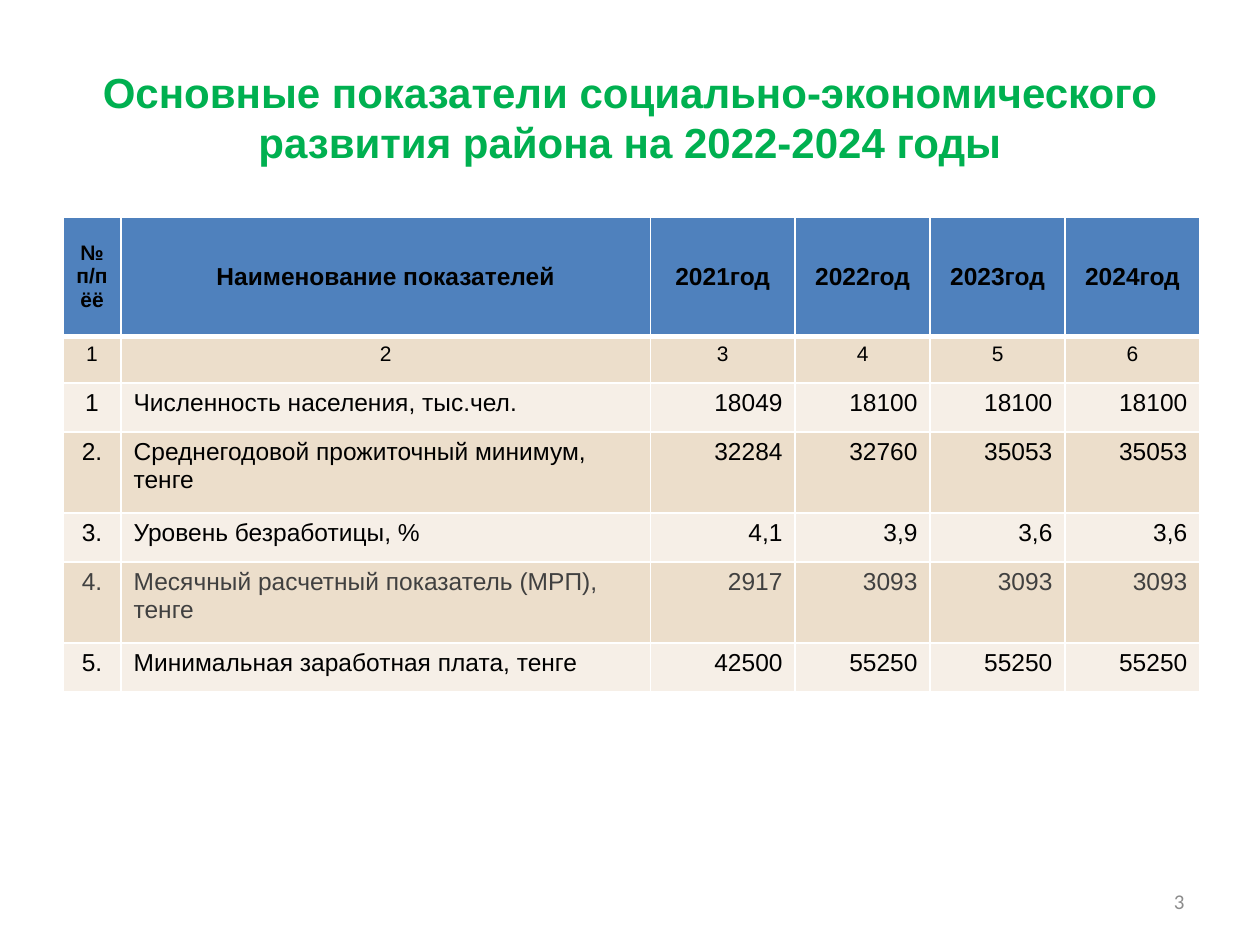
from dataclasses import dataclass

from lxml.etree import SubElement
from pptx import Presentation
from pptx.dml.color import RGBColor
from pptx.enum.text import MSO_ANCHOR as Anchor, PP_ALIGN as Align
from pptx.oxml.ns import qn
from pptx.util import Cm, Pt


@dataclass(frozen=True)
class Theme:
    font: str = "Arial"
    number_font: str = "Calibri"
    title: str = "00B050"
    ink: str = "000000"
    soft_ink: str = "404040"
    muted: str = "8C8C8C"
    header: str = "4F81BD"
    bands: tuple = ("ECDECB", "F6EFE7")
    border: str = "FFFFFF"
    title_size: int = 24
    body_size: int = 14
    small_size: int = 12
    thin: int = 1
    thick: int = 3


TITLE = "Основные показатели социально-экономического развития района на 2022-2024 годы"
COLUMN_WIDTHS = (1.17, 10.67, 2.92, 2.72, 2.72, 2.72)
ROW_HEIGHTS = (2.41, 0.94, 0.99, 1.63, 0.99, 1.63, 0.99)
INDICATORS = (
    ("№ п/пёё", "Наименование показателей", "2021год", "2022год", "2023год", "2024год"),
    ("1", "2", "3", "4", "5", "6"),
    ("1", "Численность населения, тыс.чел.", "18049", "18100", "18100", "18100"),
    ("2.", "Среднегодовой прожиточный минимум, тенге", "32284", "32760", "35053", "35053"),
    ("3.", "Уровень безработицы, %", "4,1", "3,9", "3,6", "3,6"),
    ("4.", "Месячный расчетный показатель (МРП), тенге", "2917", "3093", "3093", "3093"),
    ("5.", "Минимальная заработная плата, тенге", "42500", "55250", "55250", "55250"),
)
HEADER_ROW, NUMBERING_ROW, SOFT_ROW = 0, 1, 5


class SlideBuilder:
    def __init__(self, s, theme):
        self.s = s
        self.theme = theme

    def add_text_run(self, tf, text, size, color, align, bold=False, font=None):
        p = tf.paragraphs[0]
        p.alignment = align
        r = p.add_run()
        r.text = text
        r.font.name = font or self.theme.font
        r.font.size = Pt(size)
        r.font.bold = bold
        r.font.color.rgb = RGBColor.from_string(color)

    def text(self, box, *args, **style):
        """Add a middle-anchored text box; box is left, top, width, height in cm."""
        tf = self.s.shapes.add_textbox(*map(Cm, box)).text_frame
        tf.word_wrap = True
        tf.vertical_anchor = Anchor.MIDDLE
        self.add_text_run(tf, *args, **style)

    def table(self, left, top, rows, widths, heights):
        table = self.s.shapes.add_table(
            len(rows), len(widths), Cm(left), Cm(top), Cm(sum(widths)), Cm(sum(heights))
        ).table
        for column, width in zip(table.columns, widths):
            column.width = Cm(width)
        for i, (row, height) in enumerate(zip(rows, heights)):
            table.rows[i].height = Cm(height)
            for j, text in enumerate(row):
                self.cell(table.cell(i, j), i, j, text)

    def cell(self, cell, i, j, text):
        t = self.theme
        is_header = i == HEADER_ROW
        self.borders(cell, i)
        cell.fill.solid()
        fill = t.header if is_header else t.bands[(i - 1) % 2]
        cell.fill.fore_color.rgb = RGBColor.from_string(fill)
        cell.vertical_anchor = Anchor.MIDDLE if is_header else Anchor.TOP
        if i <= NUMBERING_ROW or j == 0:
            align = Align.CENTER
        else:
            align = Align.LEFT if j == 1 else Align.RIGHT
        is_small = i == NUMBERING_ROW or (is_header and j == 0)
        size = t.small_size if is_small else t.body_size
        color = t.soft_ink if i == SOFT_ROW else t.ink
        self.add_text_run(cell.text_frame, text, size, color, align, bold=is_header)

    def borders(self, cell, i):
        """Draw all four sides, with a thick rule under the header row."""
        t = self.theme
        thick_side = {HEADER_ROW: "B", NUMBERING_ROW: "T"}.get(i)
        tc_pr = cell._tc.get_or_add_tcPr()
        for side in "LRTB":
            width = t.thick if side == thick_side else t.thin
            ln = SubElement(tc_pr, qn(f"a:ln{side}"), w=str(Pt(width)))
            SubElement(SubElement(ln, qn("a:solidFill")), qn("a:srgbClr"), val=t.border)


def main():
    prs = Presentation()
    prs.slide_width, prs.slide_height = Cm(25.4), Cm(19.05)
    theme = Theme()
    slide = SlideBuilder(prs.slides.add_slide(prs.slide_layouts[6]), theme)
    slide.text((1.27, 0.76, 22.86, 3.18), TITLE, theme.title_size, theme.title,
               Align.CENTER, bold=True)
    slide.table(1.27, 4.37, INDICATORS, COLUMN_WIDTHS, ROW_HEIGHTS)
    slide.text((18.2, 17.66, 5.93, 1.01), "3", theme.small_size, theme.muted,
               Align.RIGHT, font=theme.number_font)
    prs.save("out.pptx")


if __name__ == "__main__":
    main()
